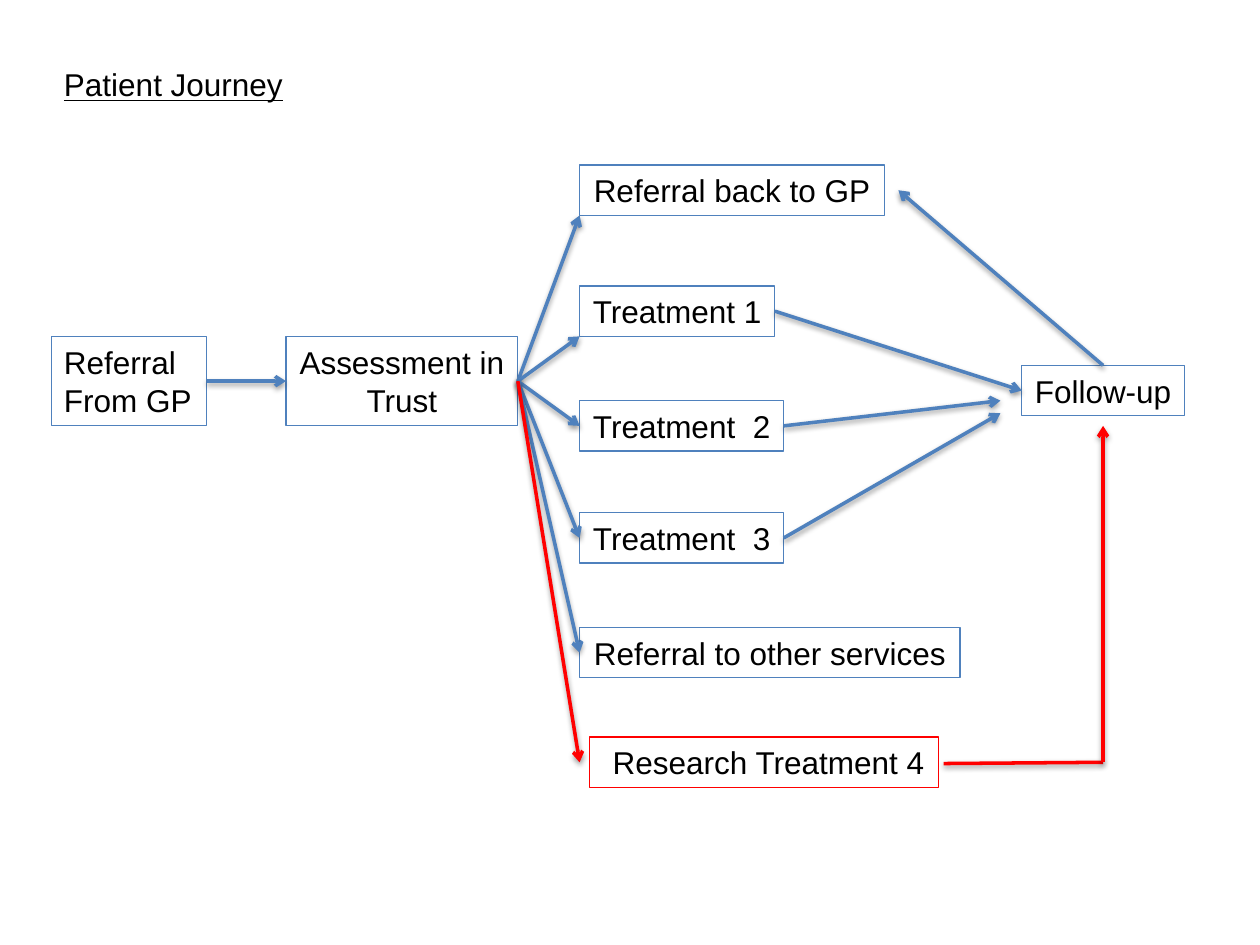
from collections import namedtuple

from pptx import Presentation
from pptx import util as u
from pptx.dml import color
from pptx.enum import shapes, text
from pptx.oxml import parse_xml
from pptx.oxml import ns

PX = u.Inches(1) // 100
BLUE, RED, BLACK = "4F81BD", "FF0000", "000000"
FONT = {"name": "Arial", "size": u.Pt(18)}
FRAME = {"word_wrap": False, "auto_size": text.MSO_AUTO_SIZE.SHAPE_TO_FIT_TEXT}
ROW = 40
OPTIONS = [
    ("Referral back to GP", 131, 242),
    ("Treatment 1", 227, 155),
    ("Treatment  2", 318, 162),
    ("Treatment  3", 407, 162),
    ("Referral to other services", 498, 302),
]
SHADOW = (
    f'<a:effectLst {ns.nsdecls("a")}>'
    '<a:outerShdw blurRad="40000" dist="20000" dir="5400000" rotWithShape="0">'
    '<a:srgbClr val="000000"><a:alpha val="38000"/></a:srgbClr>'
    "</a:outerShdw></a:effectLst>"
)
ARROWHEAD = f'<a:tailEnd {ns.nsdecls("a")} type="arrow"/>'

Box = namedtuple("Box", "left top width height")


def paint(target, value):
    target.rgb = color.RGBColor.from_string(value)


def point(box, across, down):
    return box.left + box.width * across, box.top + box.height * down


def emu(lengths):
    return [round(length * PX) for length in lengths]


def write(shape, lines, align, **extra):
    frame = shape.text_frame
    for name, value in FRAME.items():
        setattr(frame, name, value)
    for index, line in enumerate(lines):
        para = frame.add_paragraph() if index else frame.paragraphs[0]
        para.alignment = align
        span = para.add_run()
        span.text = line
        for name, value in {**FONT, **extra}.items():
            setattr(span.font, name, value)
        paint(span.font.color, BLACK)


def add_title(page, box):
    title = page.shapes.add_textbox(*emu(box))
    write(title, ["Patient Journey"], text.PP_ALIGN.LEFT, underline=True)


def add_step(page, box, lines, line_color=BLUE, align=text.PP_ALIGN.CENTER):
    step = page.shapes.add_shape(shapes.MSO_SHAPE.RECTANGLE, *emu(box))
    step.shadow.inherit = False
    step.fill.background()
    paint(step.line.color, line_color)
    step.line.width = u.Pt(0.75)
    write(step, lines, align)
    return box


def add_arrow(page, start, end, line_color=BLUE, head=True):
    arrow = page.shapes.add_connector(
        shapes.MSO_CONNECTOR.STRAIGHT, *emu(start), *emu(end)
    )
    paint(arrow.line.color, line_color)
    arrow.line.width = u.Pt(2)
    if head:
        arrow.line._get_or_add_ln().append(parse_xml(ARROWHEAD))
    arrow._element.spPr.append(parse_xml(SHADOW))


def add_intake(page, box):
    referral = add_step(
        page, box._replace(width=123), ["Referral", "From GP"],
        align=text.PP_ALIGN.LEFT,
    )
    assessment = add_step(
        page, box._replace(left=box.left + box.width - 184, width=184),
        ["Assessment in", "Trust"],
    )
    add_arrow(page, point(referral, 1, 0.5), point(assessment, 0, 0.5))
    return point(assessment, 1, 0.5)


def add_options(page, box, source):
    options = [
        add_step(page, Box(box.left, top, width, ROW), [label])
        for label, top, width in OPTIONS
    ]
    for option, down in zip(options, (1, 1, 0.5, 0.5, 0.5)):
        add_arrow(page, source, point(option, 0, down))
    return options


def add_follow_up(page, box, options):
    add_step(page, box, ["Follow-up"])
    back, first, second, third = options[:4]
    gap = box.left - 17
    add_arrow(page, point(first, 1, 0.5), point(box, 0, 0.5))
    add_arrow(page, point(second, 1, 0.5), (gap, box.top + 28))
    add_arrow(page, point(third, 1, 0.5), (gap, box.top + 38))
    end_x, end_y = point(back, 1, 0.5)
    add_arrow(page, point(box, 0.5, 0), (end_x + 11, end_y))


def add_research(page, box, source, follow_up):
    add_step(page, box, [" Research Treatment 4"], RED)
    left, middle = point(box, 0, 0.5)
    right = box.left + box.width
    center, bottom = point(follow_up, 0.5, 1)
    corner = center, middle
    add_arrow(page, source, (left - 8, middle), RED)
    add_arrow(page, (right + 4, middle + 1), corner, RED, head=False)
    add_arrow(page, corner, (center, bottom + 8), RED)


def main():
    deck = Presentation()
    deck.slide_width, deck.slide_height = emu((1000, 750))
    page = deck.slides.add_slide(deck.slide_layouts[6])
    follow_up = Box(811, 290, 129, ROW)
    add_title(page, Box(41, 47, 196, ROW))
    source = add_intake(page, Box(41, 267, 370, 71))
    options = add_options(page, Box(460, 131, 302, 407), source)
    add_follow_up(page, follow_up, options)
    add_research(page, Box(468, 585, 277, ROW), source, follow_up)
    deck.save("out.pptx")


if __name__ == "__main__":
    main()
